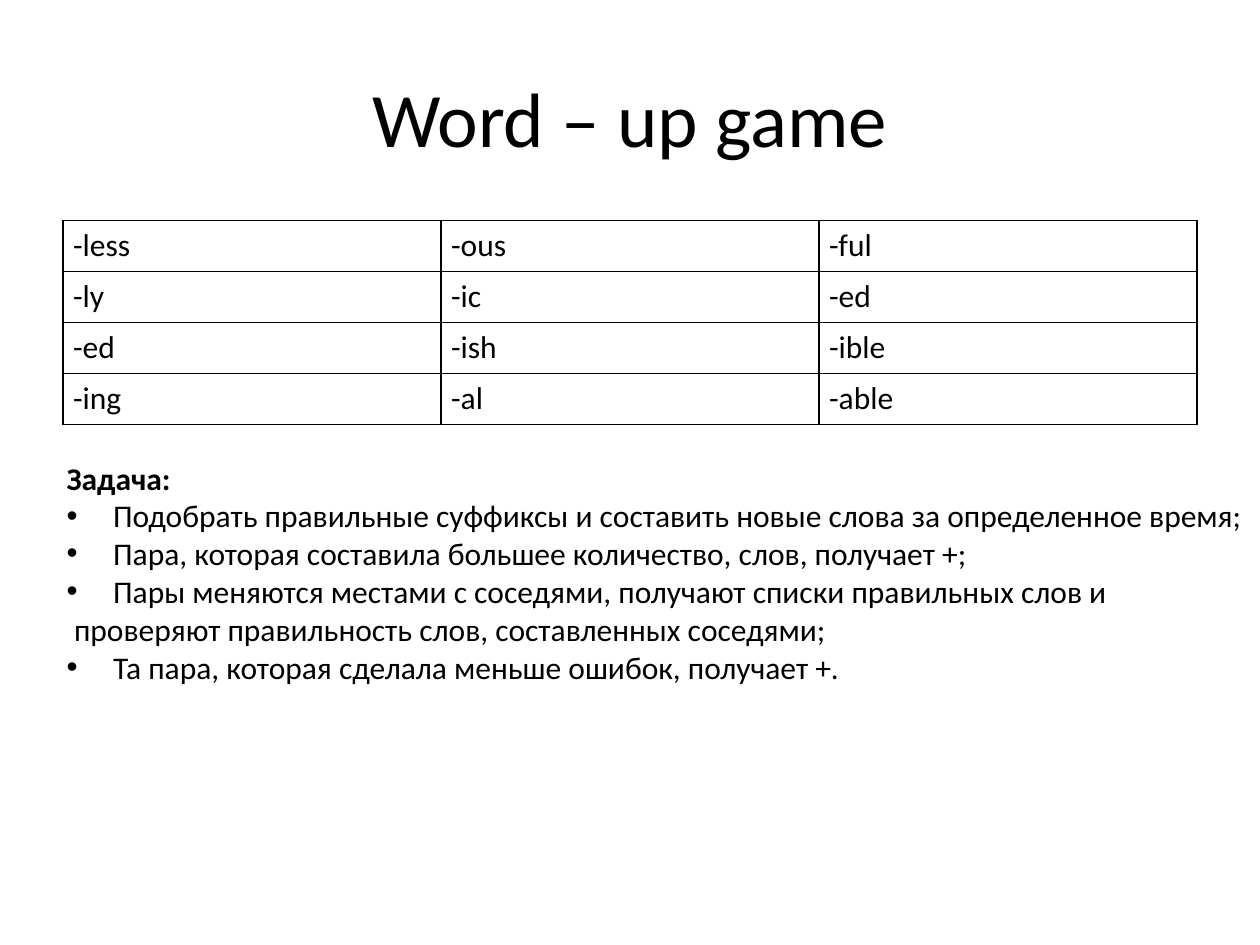
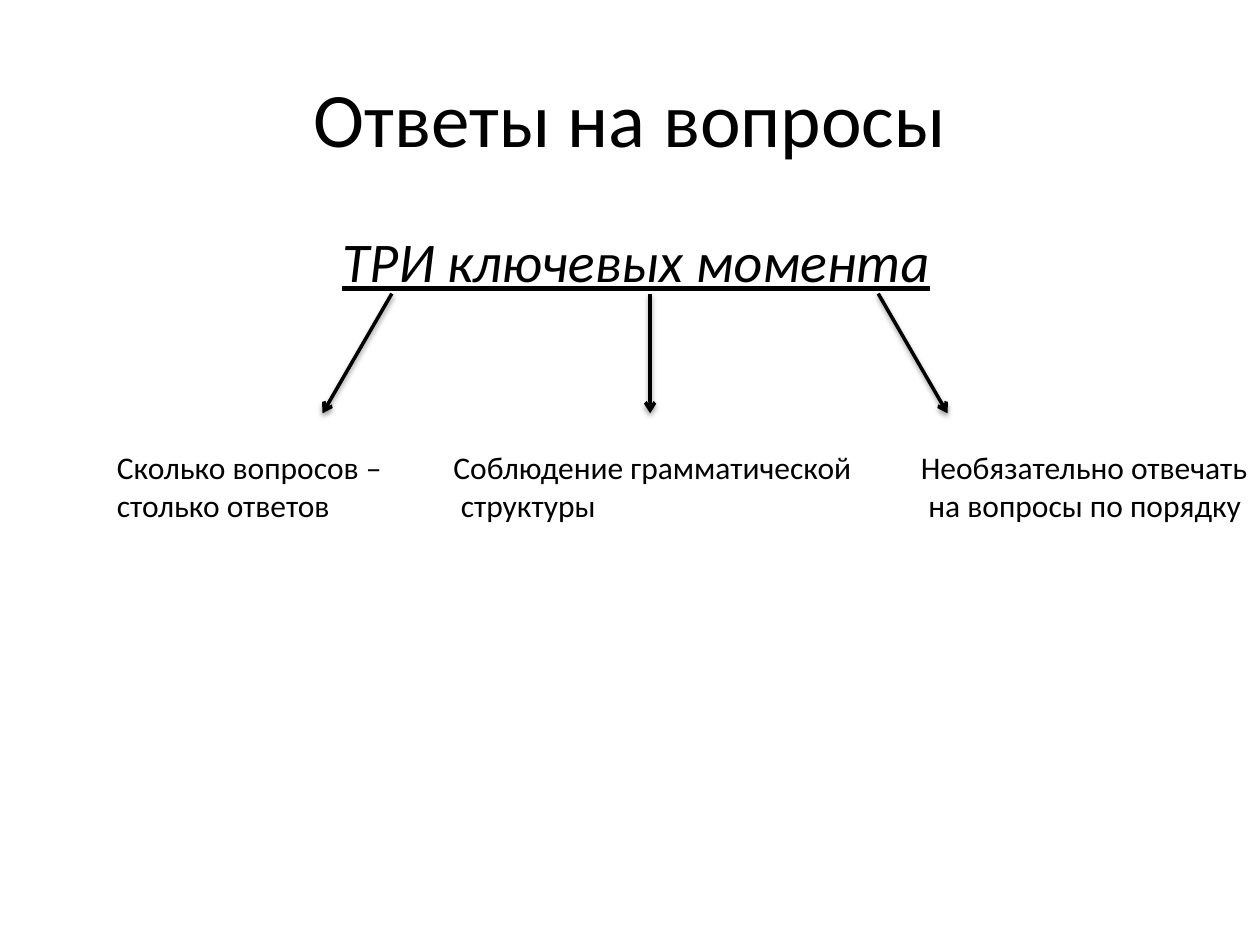
import pptx
import pptx.dml.color
import pptx.enum.shapes
import pptx.enum.text
import pptx.oxml
import pptx.oxml.ns
import pptx.util

Inches = pptx.util.Inches
Pt = pptx.util.Pt
Align = pptx.enum.text.PP_ALIGN
Anchor = pptx.enum.text.MSO_ANCHOR

COLORS = {"ink": "000000", "page": "FFFFFF"}
FONT = "Calibri"
SPACE = 0.06  # width of one space at body size, inches
HANG = 0.37


def color(name):
    return pptx.dml.color.RGBColor.from_string(COLORS[name])


def add_xml(parent, tag, attrs="", inner=""):
    """Append one drawing element to parent."""
    space = pptx.oxml.ns.nsdecls("a")
    xml = f"<a:{tag} {space} {attrs}>{inner}</a:{tag}>"
    parent.append(pptx.oxml.parse_xml(xml))


def ink_fill(inner=""):
    return f'<a:solidFill><a:srgbClr val="{COLORS["ink"]}">{inner}</a:srgbClr></a:solidFill>'


class Deck:
    def __init__(self):
        self.show = pptx.Presentation()
        self.show.slide_width = Inches(10)
        self.show.slide_height = Inches(7.5)
        self.slide = None

    def page(self, title):
        self.slide = self.show.slides.add_slide(self.show.slide_layouts[6])
        fill = self.slide.background.fill
        fill.solid()
        fill.fore_color.rgb = color("page")
        frame = self.text([title], 0.5, 0.3, 9, 1.25, size=44, align=Align.CENTER)
        frame.vertical_anchor = Anchor.MIDDLE

    def style(self, para, size):
        for run in para.runs:
            run.font.name = FONT
            run.font.size = Pt(size)
            run.font.color.rgb = color("ink")

    def text(self, lines, left, top, width, height, size=18, align=None, wrap=True):
        box = self.slide.shapes.add_textbox(
            Inches(left), Inches(top), Inches(width), Inches(height))
        frame = box.text_frame
        frame.word_wrap = wrap
        frame.text = "\n".join(lines)
        for para in frame.paragraphs:
            para.alignment = align
            self.style(para, size)
        return frame

    def note(self, lines, left, top, width, height):
        """Text box that fits its unwrapped lines."""
        frame = self.text(lines, left, top, width, height, wrap=False)
        frame.auto_size = pptx.enum.text.MSO_AUTO_SIZE.SHAPE_TO_FIT_TEXT
        return frame

    def indent(self, para, left, bullet=False):
        props = para._p.get_or_add_pPr()
        props.set("marL", str(Inches(left)))
        if bullet:
            props.set("indent", str(-Inches(left)))
            add_xml(props, "buFont", 'typeface="Arial"')
            add_xml(props, "buChar", 'char="•"')

    def grid(self, rows, left, top, width, height):
        shape = self.slide.shapes.add_table(
            len(rows), len(rows[0]), Inches(left), Inches(top),
            Inches(width), Inches(height))
        table = shape.table
        table.first_row = table.horz_banding = False
        for r, row in enumerate(rows):
            for c, word in enumerate(row):
                self.cell(table.cell(r, c), word)

    def cell(self, cell, word):
        cell.text_frame.text = word
        cell.margin_left = cell.margin_right = Inches(0.08)
        cell.margin_top = cell.margin_bottom = 0
        para = cell.text_frame.paragraphs[0]
        para.line_spacing = 1.15
        para.space_after = Pt(7.5)
        self.style(para, 18)
        props = cell._tc.get_or_add_tcPr()
        for side in ("lnL", "lnR", "lnT", "lnB"):
            add_xml(props, side, f'w="{Pt(1)}"', ink_fill())
        cell.fill.background()

    def arrow(self, start, end):
        kind = pptx.enum.shapes.MSO_CONNECTOR.STRAIGHT
        line = self.slide.shapes.add_connector(
            kind, *(Inches(v) for v in start + end))
        line.line.color.rgb = color("ink")
        line.line.width = Pt(2)
        add_xml(line.line._get_or_add_ln(), "tailEnd", 'type="arrow"')
        shade = f'<a:srgbClr val="{COLORS["ink"]}"><a:alpha val="38000"/></a:srgbClr>'
        add_xml(line._element.spPr, "effectLst", "",
                f'<a:outerShdw blurRad="{Pt(3.1)}" dist="{Pt(1.6)}" '
                f'dir="5400000" rotWithShape="0">{shade}</a:outerShdw>')


def game(deck):
    deck.page("Word – up game")
    deck.grid([
        ["-less", "-ous", "-ful"],
        ["-ly", "-ic", "-ed"],
        ["-ed", "-ish", "-ible"],
        ["-ing", "-al", "-able"],
    ], 0.5, 1.75, 9, 1.62)
    frame = deck.note([
        "Задача:",
        "Подобрать правильные суффиксы и составить новые слова за определенное время;",
        "Пара, которая составила большее количество, слов, получает +;",
        "Пары меняются местами с соседями, получают списки правильных слов и",
        "проверяют правильность слов, составленных соседями;",
        "Та пара, которая сделала меньше ошибок, получает +.",
    ], 0.43, 3.59, 9.63, 1.92)
    head, *tasks = frame.paragraphs
    head.runs[0].font.bold = True
    for para in tasks:
        if para.text.startswith("проверяют"):
            deck.indent(para, SPACE)
        else:
            deck.indent(para, HANG, bullet=True)


def answers(deck):
    deck.page("Ответы на вопросы")
    frame = deck.text(["ТРИ ключевых момента"], 0.55, 1.75, 9, 4.95,
                      size=32, align=Align.CENTER)
    para = frame.paragraphs[0]
    para.space_before = Pt(6.4)
    font = para.runs[0].font
    font.italic = font.underline = True
    for start, end in ((3.11, 2.56), (5.16, 5.16), (6.97, 7.52)):
        deck.arrow((start, 2.33), (end, 3.28))
    points = [
        (0.83, 2.34, 0, ["Сколько вопросов –", "столько ответов"]),
        (3.5, 3.41, SPACE, ["Соблюдение грамматической", "структуры"]),
        (7.21, 2.83, SPACE, ["Необязательно отвечать", "на вопросы по порядку"]),
    ]
    for left, width, shift, lines in points:
        frame = deck.note(lines, left, 3.51, width, 0.71)
        deck.indent(frame.paragraphs[1], shift)


def main():
    deck = Deck()
    game(deck)
    answers(deck)
    deck.show.save("out.pptx")


if __name__ == "__main__":
    main()
